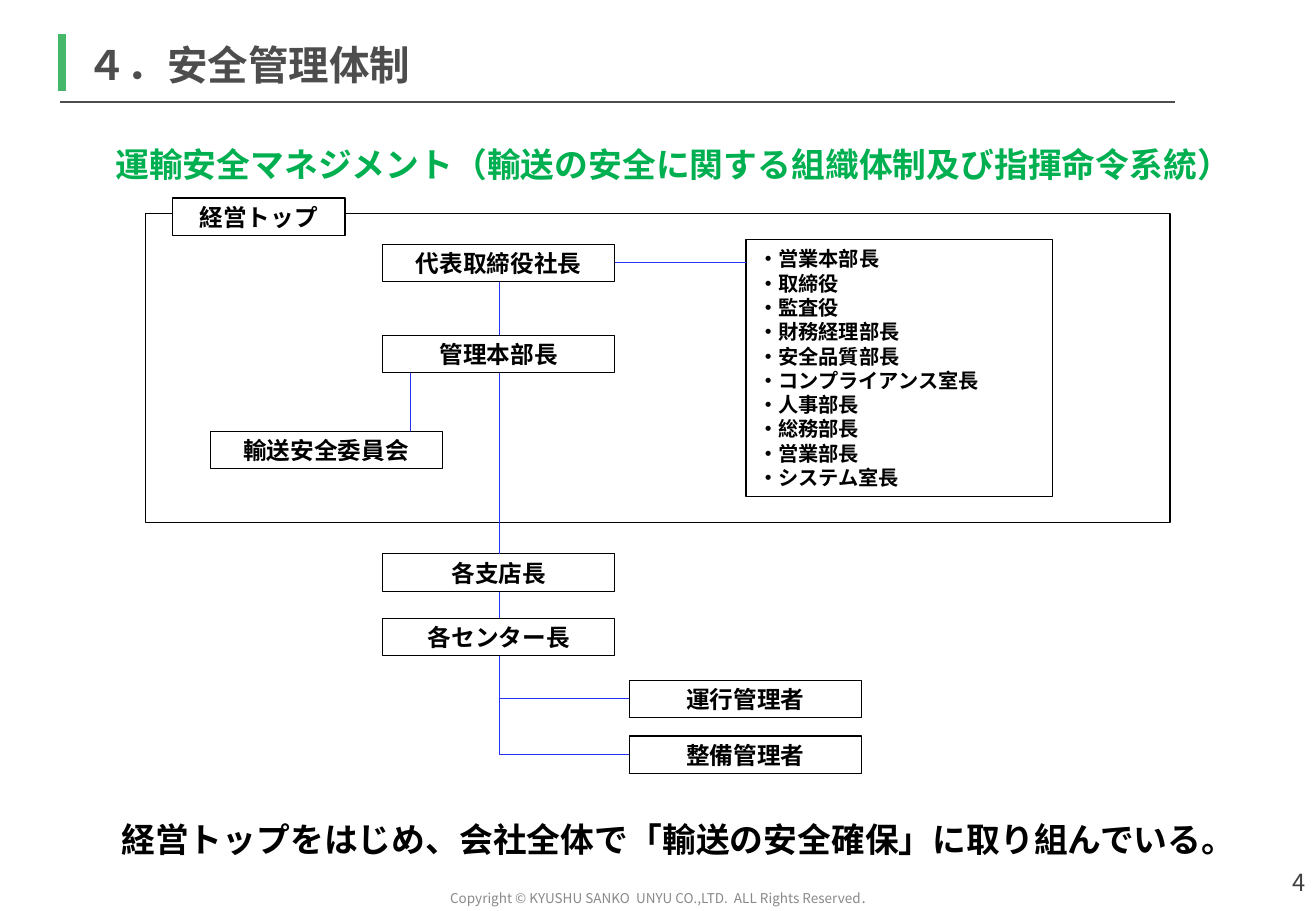
import pptx
import pptx.util
import pptx.dml.color
import pptx.enum.shapes
import pptx.enum.text
import pptx.oxml
import pptx.oxml.ns
from pptx.util import Inches

FONT = "Noto Sans CJK JP"
COLORS = {
    "black": "000000", "white": "FFFFFF", "grey": "4D4D4D", "number": "404040",
    "footer": "898989", "bar": "45B969", "heading": "00B050", "link": "2832F4",
}
RGB = pptx.dml.color.RGBColor.from_string
ALIGN = pptx.enum.text.PP_ALIGN
ANCHOR = pptx.enum.text.MSO_ANCHOR

prs = pptx.Presentation()
prs.slide_width, prs.slide_height = Inches(10.83), Inches(7.5)
s = prs.slides.add_slide(prs.slide_layouts[6])


def add_box(at, paragraphs, size, color="black", bold=True, align=ALIGN.LEFT,
            anchor=ANCHOR.MIDDLE, frame=False, fill=None, spacing=None):
    """Add a text box, or a framed rectangle; a paragraph is a list of (text, size) runs or a string."""
    place = [Inches(v) for v in at]
    if frame:
        sp = s.shapes.add_shape(pptx.enum.shapes.MSO_SHAPE.RECTANGLE, *place)
        sp.shadow.inherit = False
        sp.line.color.rgb = RGB(COLORS["black"])
        sp.line.width = pptx.util.Pt(0.75)
        if fill:
            sp.fill.solid()
            sp.fill.fore_color.rgb = RGB(COLORS[fill])
        else:
            sp.fill.background()
    else:
        sp = s.shapes.add_textbox(*place)
    tf = sp.text_frame
    tf.word_wrap = True
    tf.vertical_anchor = anchor
    for i, runs in enumerate(paragraphs):
        p = tf.paragraphs[0] if i == 0 else tf.add_paragraph()
        p.alignment = align
        if spacing:
            p.line_spacing = pptx.util.Pt(spacing)
        for text, run_size in [(runs, size)] if isinstance(runs, str) else runs:
            r = p.add_run()
            r.text = text
            for name, value in {"name": FONT, "size": pptx.util.Pt(run_size), "bold": bold}.items():
                setattr(r.font, name, value)
            r.font.color.rgb = RGB(COLORS[color])
            ea = pptx.oxml.parse_xml(
                f'<a:ea {pptx.oxml.ns.nsdecls("a")} typeface="{FONT}"/>')
            r.font._element.find(pptx.oxml.ns.qn("a:latin")).addnext(ea)


def add_line(x1, y1, x2, y2, color="link", width=0.75):
    line = s.shapes.add_connector(pptx.enum.shapes.MSO_CONNECTOR.STRAIGHT,
                                  Inches(x1), Inches(y1), Inches(x2), Inches(y2))
    line.line.color.rgb = RGB(COLORS[color])
    line.line.width = pptx.util.Pt(width)
    line._element.spPr.append(
        pptx.oxml.parse_xml(f'<a:effectLst {pptx.oxml.ns.nsdecls("a")}/>'))


# Header and footer
add_box((2.15, 7.29, 6.53, 0.2),
        [[("Copyright © KYUSHU SANKO  UNYU CO.,LTD.  ALL Rights Reserved", 8), (".", 9)]],
        8, "footer", bold=False, align=ALIGN.CENTER)
add_line(0.49, 0.84, 9.67, 0.84, "grey")
add_line(0.51, 0.75, 0.51, 0.28, "bar", 4.5)
add_box((0.61, 0.3, 9.75, 0.46), ["４．安全管理体制"], 24, "grey")
add_box((8.31, 7.1, 2.53, 0.4), ["4"], 14, "number", bold=False,
        align=ALIGN.RIGHT, anchor=ANCHOR.TOP)
add_box((0.85, 1.13, 9.75, 0.44),
        ["運輸安全マネジメント（輸送の安全に関する組織体制及び指揮命令系統）"], 20, "heading")

# Management frame and its members
add_box((1.2, 1.76, 8.43, 2.54), [], 14, frame=True)
members = ["営業本部長", "取締役", "監査役", "財務経理部長", "安全品質部長",
           "コンプライアンス室長", "人事部長", "総務部長", "営業部長", "システム室長"]
add_box((6.14, 1.97, 2.52, 2.12), ["・" + m for m in members], 12, frame=True, spacing=14.4)
add_box((1.42, 1.63, 1.42, 0.31), ["経営トップ"], 14, align=ALIGN.CENTER,
        frame=True, fill="white")

# Organisation chart
BOX_W, BOX_H = 1.91, 0.31
CHAIN_X, COMMITTEE_X, MANAGER_X = 3.15, 1.73, 5.18
posts = [
    ("代表取締役社長", CHAIN_X, 2.01),
    ("管理本部長", CHAIN_X, 2.76),
    ("輸送安全委員会", COMMITTEE_X, 3.55),
    ("各支店長", CHAIN_X, 4.56),
    ("各センター長", CHAIN_X, 5.09),
    ("運行管理者", MANAGER_X, 5.6),
    ("整備管理者", MANAGER_X, 6.06),
]
for post, x, y in posts:
    add_box((x, y, BOX_W, BOX_H), [post], 14, align=ALIGN.CENTER, frame=True)

trunk_x = 4.11
chain = [y for _, x, y in posts if x == CHAIN_X]
managers = [y + 0.15 for _, x, y in posts if x == MANAGER_X]
for upper, lower in zip(chain, chain[1:] + managers[-1:]):
    add_line(trunk_x, upper + BOX_H, trunk_x, lower)
for y in managers:
    add_line(trunk_x, y, MANAGER_X, y)
add_line(CHAIN_X + BOX_W, 2.16, 6.14, 2.16)
add_line(3.38, 2.76 + BOX_H, 3.38, 3.55)

add_box((0.9, 6.69, 9.66, 0.44),
        ["経営トップをはじめ、会社全体で「輸送の安全確保」に取り組んでいる。"], 20)

prs.save("out.pptx")
